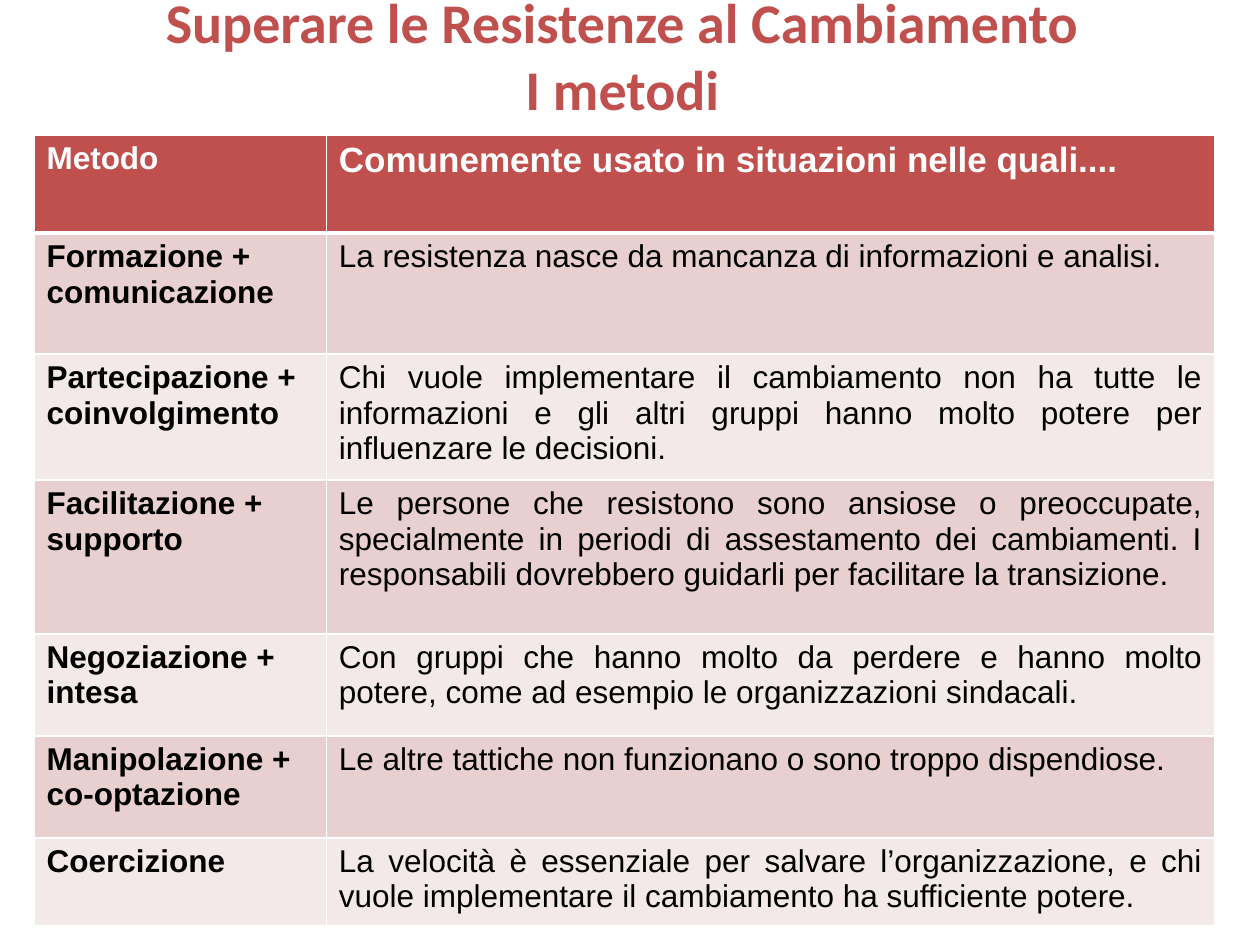
import pptx
import pptx.util
import pptx.dml.color
import pptx.enum.text
import pptx.oxml
from pptx.util import Inches

COLORS = {"red": "C0504D", "rose": "E8D0D0", "pale": "F4E9E9",
          "white": "FFFFFF", "black": "000000"}
TITLE = "Superare le Resistenze al Cambiamento\vI metodi"
HEADINGS = ("Metodo", "Comunemente usato in situazioni nelle quali....")
METHODS = [  # method, situation, row height in inches
    ("Formazione + comunicazione",
     "La resistenza nasce da mancanza di informazioni e analisi.", 0.96),
    ("Partecipazione + coinvolgimento",
     "Chi vuole implementare il cambiamento non ha tutte le informazioni e gli altri "
     "gruppi hanno molto potere per influenzare le decisioni.", 0.94),
    ("Facilitazione + supporto",
     "Le persone che resistono sono ansiose o preoccupate, specialmente in periodi di "
     "assestamento dei cambiamenti. I responsabili dovrebbero guidarli per facilitare "
     "la transizione.", 1.22),
    ("Negoziazione + intesa",
     "Con gruppi che hanno molto da perdere e hanno molto potere, come ad esempio le "
     "organizzazioni sindacali.", 0.81),
    ("Manipolazione + co-optazione",
     "Le altre tattiche non funzionano o sono troppo dispendiose.", 0.81),
    ("Coercizione",
     "La velocità è essenziale per salvare l’organizzazione, e chi vuole implementare "
     "il cambiamento ha sufficiente potere.", 0.68),
]
HEADER_HEIGHT = 0.78
COLUMN_WIDTHS = (2.32, 7.05)
ALIGN = pptx.enum.text.PP_ALIGN


def rgb(name):
    return pptx.dml.color.RGBColor.from_string(COLORS[name])


def style_font(para, face, size, color, bold):
    font = para.font
    font.name, font.size, font.bold = face, pptx.util.Pt(size), bold
    font.color.rgb = rgb(color)


def set_borders(cell, widths):
    """Draw white borders; widths are points for left, right, top, bottom."""
    properties = cell._tc.get_or_add_tcPr()
    for index, (side, width) in enumerate(zip("LRTB", widths)):
        properties.insert(index, pptx.oxml.parse_xml(
            f'<a:ln{side} xmlns:a="http://schemas.openxmlformats.org/drawingml/2006/main" '
            f'w="{pptx.util.Pt(width)}"><a:solidFill><a:srgbClr val="{COLORS["white"]}"/>'
            f'</a:solidFill></a:ln{side}>'))


def fill_cell(cell, text, fill, size, color, bold, align, borders):
    cell.fill.solid()
    cell.fill.fore_color.rgb = rgb(fill)
    cell.text = text
    para = cell.text_frame.paragraphs[0]
    para.alignment = align
    style_font(para, "Arial", size, color, bold)
    set_borders(cell, borders)


def add_title(page):
    box = page.shapes.add_textbox(Inches(0.59), Inches(-0.19), Inches(8.7), Inches(1.25))
    frame = box.text_frame
    frame.word_wrap = True
    frame.vertical_anchor = pptx.enum.text.MSO_ANCHOR.MIDDLE
    para = frame.paragraphs[0]
    para.text = TITLE
    para.alignment = ALIGN.CENTER
    style_font(para, "Calibri", 32, "red", True)


def add_methods_table(page):
    heights = [HEADER_HEIGHT] + [method[2] for method in METHODS]
    table = page.shapes.add_table(
        len(heights), len(COLUMN_WIDTHS), Inches(0.27), Inches(1.07),
        Inches(sum(COLUMN_WIDTHS)), Inches(sum(heights))).table
    for column, width in zip(table.columns, COLUMN_WIDTHS):
        column.width = Inches(width)
    for row, height in zip(table.rows, heights):
        row.height = Inches(height)

    for column, (heading, size) in enumerate(zip(HEADINGS, (18, 20))):
        fill_cell(table.cell(0, column), heading, "red", size, "white", True,
                  ALIGN.LEFT, (1, 1, 1, 3))
    for row, (method, situation, _) in enumerate(METHODS, start=1):
        fill = "rose" if row % 2 else "pale"
        borders = (1, 1, 3 if row == 1 else 1, 1)
        fill_cell(table.cell(row, 0), method, fill, 18, "black", True, ALIGN.LEFT, borders)
        fill_cell(table.cell(row, 1), situation, fill, 18, "black", False,
                  ALIGN.JUSTIFY, borders)


def main():
    deck = pptx.Presentation()
    deck.slide_width, deck.slide_height = Inches(10), Inches(7.5)
    page = deck.slides.add_slide(deck.slide_layouts[6])
    add_title(page)
    add_methods_table(page)
    deck.save("out.pptx")


if __name__ == "__main__":
    main()
